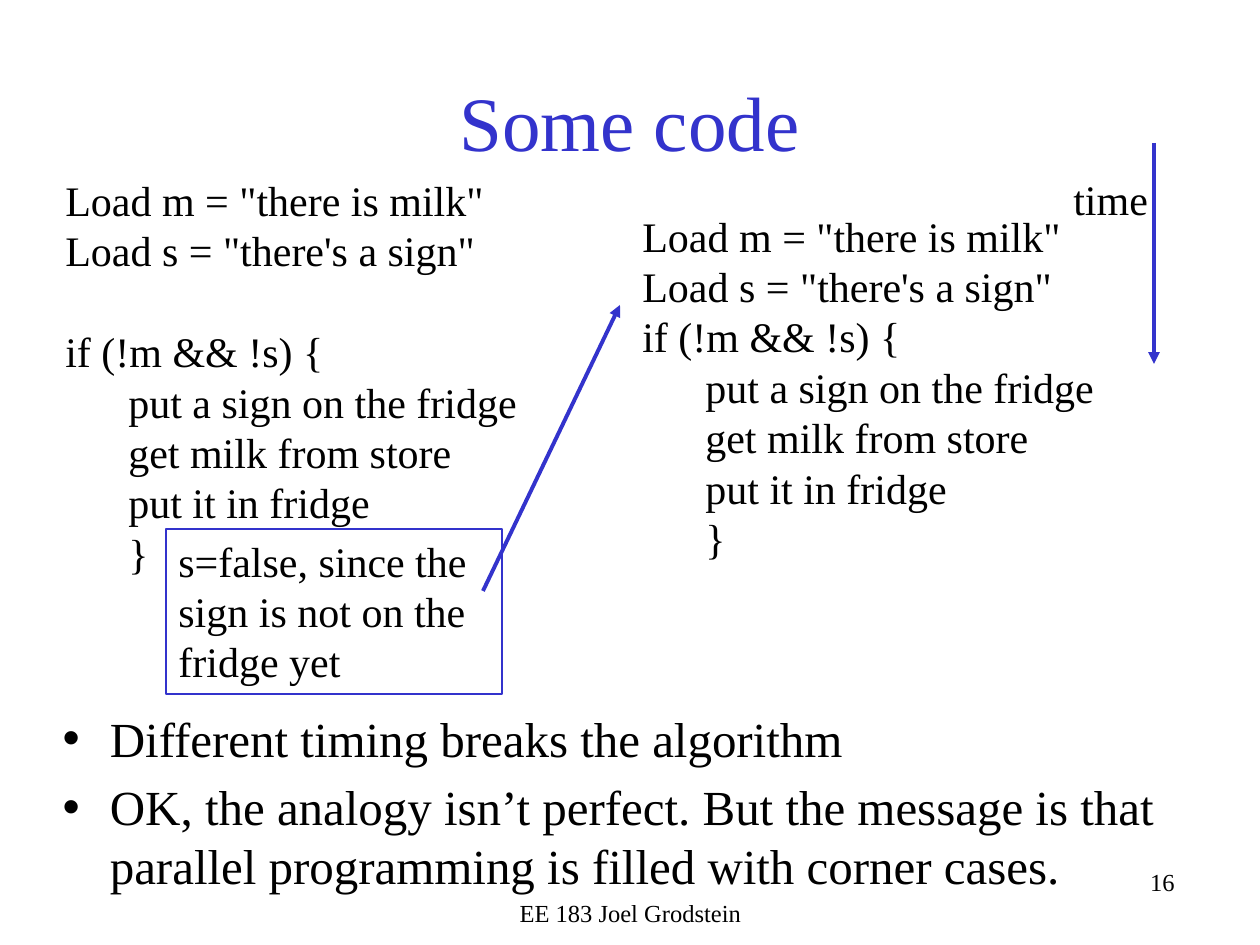
from pptx import Presentation
from pptx.dml.color import RGBColor
from pptx.enum.shapes import MSO_CONNECTOR as Connector
from pptx.enum.text import MSO_ANCHOR as Anchor, MSO_AUTO_SIZE as AutoSize, PP_ALIGN as Align
from pptx.oxml.ns import qn
from pptx.util import Pt
from lxml.etree import SubElement

PX = 914400 / 126
FONT = "Times New Roman"
BLACK = "000000"
BLUE = "3333CC"

LOADS = ['Load m = "there is milk"', 'Load s = "there\'s a sign"']
TEST = "if (!m && !s) {"
STEPS = ["put a sign on the fridge", "get milk from store", "put it in fridge", "}"]
LESSONS = [
    "Different timing breaks the algorithm",
    "OK, the analogy isn’t perfect. But the message is that "
    "parallel programming is filled with corner cases.",
]


def px(*lengths):
    return [round(length * PX) for length in lengths]


def color(value):
    return RGBColor.from_string(value)


def write(frame, lines, size, ink=BLACK, align=Align.LEFT):
    frame.text = "\n".join(lines)
    frame.word_wrap = True
    for paragraph in frame.paragraphs:
        paragraph.alignment = align
        for run in paragraph.runs:
            run.font.name = FONT
            run.font.size = Pt(size)
            run.font.color.rgb = color(ink)


def fill_placeholder(holder, box, lines, size, ink=BLACK, align=Align.LEFT):
    holder.left, holder.top, holder.width, holder.height = px(*box)
    write(holder.text_frame, lines, size, ink, align)
    holder.text_frame.auto_size = AutoSize.NONE


def add_label(slide, box, lines, size=24, align=Align.LEFT):
    label = slide.shapes.add_textbox(*px(*box))
    write(label.text_frame, lines, size, align=align)
    label.text_frame.vertical_anchor = Anchor.TOP
    return label


def add_code(slide, box, gap_before_test=0):
    code = add_label(slide, box, LOADS + [TEST] + STEPS)
    paragraphs = code.text_frame.paragraphs
    paragraphs[len(LOADS)].space_before = Pt(gap_before_test)
    for step in paragraphs[len(LOADS) + 1:]:
        step.level = 1
        properties = step._p.get_or_add_pPr()
        properties.set("marL", str(px(63)[0]))
        properties.set("indent", "0")


def add_note(slide, box, text):
    note = add_label(slide, box, [text])
    note.line.color.rgb = color(BLUE)
    note.line.width = Pt(0.75)


def add_arrow(slide, start, end):
    arrow = slide.shapes.add_connector(Connector.STRAIGHT, *px(*start, *end))
    arrow.line.color.rgb = color(BLUE)
    arrow.line.width = Pt(2.25)
    SubElement(arrow.line._get_or_add_ln(), qn("a:tailEnd"), type="triangle")
    SubElement(arrow._element.spPr, qn("a:effectLst"))


def main():
    deck = Presentation()
    deck.slide_width, deck.slide_height = px(1260, 945)
    slide = deck.slides.add_slide(deck.slide_layouts[1])
    title, lessons = slide.placeholders

    fill_placeholder(title, (94, 42, 1071, 157), ["Some code"], 44, BLUE, Align.CENTER)
    fill_placeholder(lessons, (50, 702, 1173, 127), LESSONS, 28)
    add_label(slide, (788, 861, 399, 63), ["16"], 14, Align.RIGHT)
    add_label(slide, (431, 892, 399, 63), ["EE 183 Joel Grodstein"], 14, Align.CENTER)

    add_code(slide, (53, 168, 514, 420), gap_before_test=29)
    add_code(slide, (630, 204, 557, 369))
    add_note(slide, (166, 529, 336, 165), "s=false, since the sign is not on the fridge yet")
    add_arrow(slide, (483, 591), (620, 305))
    add_arrow(slide, (1154, 143), (1154, 364))
    add_label(slide, (1061, 167, 126, 63), ["time"])

    deck.save("out.pptx")


if __name__ == "__main__":
    main()
